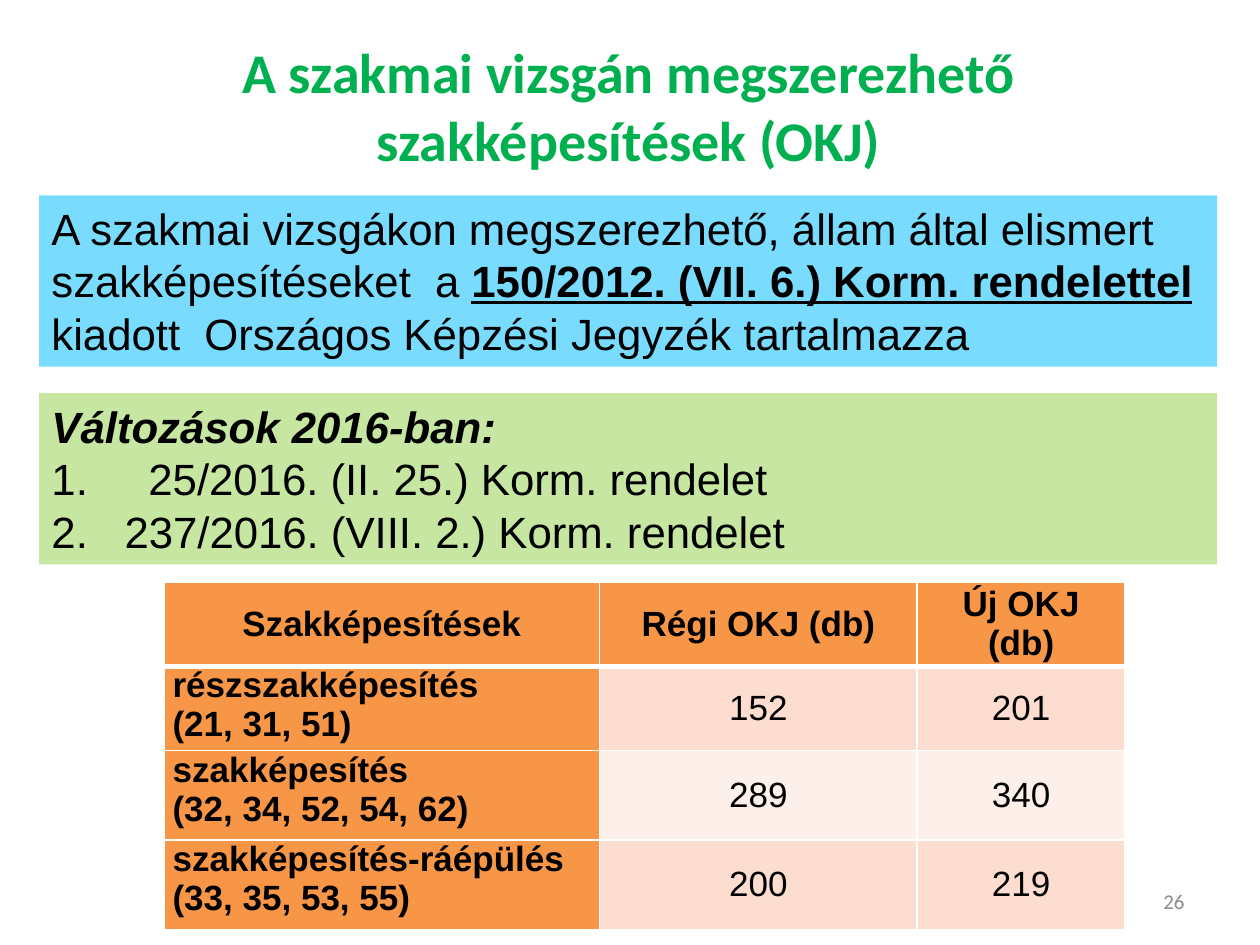
from dataclasses import dataclass

from lxml import etree
from pptx import Presentation
from pptx.dml.color import RGBColor
from pptx.enum.shapes import MSO_SHAPE
from pptx.enum.text import MSO_ANCHOR, PP_ALIGN
from pptx.oxml.ns import qn
from pptx.util import Inches, Pt

RECTANGLE = MSO_SHAPE.RECTANGLE
TOP, MIDDLE = MSO_ANCHOR.TOP, MSO_ANCHOR.MIDDLE
LEFT, CENTER = PP_ALIGN.LEFT, PP_ALIGN.CENTER
RIGHT, JUSTIFY = PP_ALIGN.RIGHT, PP_ALIGN.JUSTIFY
TITLE_ONLY = 5


@dataclass(frozen=True)
class Theme:
    heading_font: str = "Calibri"
    body_font: str = "Arial"
    title_size: int = 32
    body_size: int = 25
    table_size: int = 20
    number_size: int = 12
    black: str = "000000"
    white: str = "FFFFFF"
    green: str = "00B050"
    grey: str = "8C8C8C"
    blue_panel: str = "79DCFF"
    green_panel: str = "C6E6A2"
    orange: str = "F79646"
    bands: tuple = ("FCDDCF", "FDEFE9")


THEME = Theme()
PANEL_LEFT, PANEL_WIDTH, PANEL_HEIGHT = 0.31, 9.35, 1.36
COLUMNS = (3.46, 2.52, 1.65)
ROWS = (0.43, 0.67, 0.71, 0.71)

HEADER = ("Szakképesítések", "Régi OKJ (db)", "Új OKJ (db)")
RECORDS = (
    ("részszakképesítés", "(21, 31, 51)", "152", "201"),
    ("szakképesítés", "(32, 34, 52, 54, 62)", "289", "340"),
    ("szakképesítés-ráépülés", "(33, 35, 53, 55)", "200", "219"),
)


def add_span(para, text, size=THEME.body_size, color=THEME.black,
             font=THEME.body_font, **styles):
    span = para.add_run()
    span.text = text
    span.font.name, span.font.size = font, Pt(size)
    span.font.color.rgb = RGBColor.from_string(color)
    for style, value in styles.items():
        setattr(span.font, style, value)


def next_para(frame, index, align=LEFT):
    para = frame.paragraphs[0] if index == 0 else frame.add_paragraph()
    para.alignment = align
    return para


def number_para(para, number, indent):
    """Give the paragraph an automatic number and a hanging indent."""
    props = para._p.get_or_add_pPr()
    props.set("marL", str(Inches(indent)))
    props.set("indent", str(-Inches(indent)))
    etree.SubElement(props, qn("a:buFont"), typeface=THEME.body_font)
    etree.SubElement(props, qn("a:buAutoNum"), type="arabicPeriod",
                     startAt=str(number))


def add_title(page, text):
    title = page.shapes.title
    title.left, title.top = Inches(0.49), Inches(0.21)
    title.width, title.height = Inches(9), Inches(1.25)
    frame = title.text_frame
    frame.word_wrap, frame.vertical_anchor = True, MIDDLE
    add_span(next_para(frame, 0, CENTER), text, THEME.title_size,
             THEME.green, THEME.heading_font, bold=True)


def add_panel(page, top, color, lines):
    """Add a filled panel; each line is a list of (text, styles) pairs."""
    box = page.shapes.add_shape(
        RECTANGLE, Inches(PANEL_LEFT), Inches(top),
        Inches(PANEL_WIDTH), Inches(PANEL_HEIGHT))
    box.shadow.inherit = False
    box.fill.solid()
    box.fill.fore_color.rgb = RGBColor.from_string(color)
    box.line.fill.background()
    frame = box.text_frame
    frame.word_wrap, frame.vertical_anchor = True, TOP
    for index, line in enumerate(lines):
        para = next_para(frame, index)
        for text, styles in line:
            add_span(para, text, **styles)
    return frame


def set_borders(cell, bottom=1):
    props = cell._tc.get_or_add_tcPr()
    widths = {"a:lnL": 1, "a:lnR": 1, "a:lnT": 1, "a:lnB": bottom}
    for index, (side, width) in enumerate(widths.items()):
        border = etree.Element(qn(side), w=str(Pt(width)))
        fill = etree.SubElement(border, qn("a:solidFill"))
        etree.SubElement(fill, qn("a:srgbClr"), val=THEME.white)
        props.insert(index, border)


def fill_cell(cell, lines, color, align=CENTER, anchor=MIDDLE, bold=False,
              bottom=1):
    cell.fill.solid()
    cell.fill.fore_color.rgb = RGBColor.from_string(color)
    cell.margin_left = cell.margin_right = Inches(0.07)
    cell.margin_top = cell.margin_bottom = 0
    cell.vertical_anchor = anchor
    for index, line in enumerate(lines):
        para = next_para(cell.text_frame, index, align)
        add_span(para, line, THEME.table_size, bold=bold)
    set_borders(cell, bottom)


def add_counts_table(page):
    table = page.shapes.add_table(
        len(ROWS), len(COLUMNS), Inches(1.3), Inches(4.62),
        Inches(sum(COLUMNS)), Inches(sum(ROWS))).table
    for column, width in zip(table.columns, COLUMNS):
        column.width = Inches(width)
    for row, height in zip(table.rows, ROWS):
        row.height = Inches(height)
    for column, label in enumerate(HEADER):
        fill_cell(table.cell(0, column), [label], THEME.orange, bold=True,
                  bottom=3)
    for row, (name, codes, *counts) in enumerate(RECORDS, start=1):
        fill_cell(table.cell(row, 0), [name, codes], THEME.orange,
                  JUSTIFY, TOP, bold=True)
        band = THEME.bands[(row - 1) % 2]
        for column, count in enumerate(counts, start=1):
            fill_cell(table.cell(row, column), [count], band)


def add_page_number(page, text):
    box = page.shapes.add_textbox(Inches(7.17), Inches(6.95),
                                  Inches(2.33), Inches(0.4))
    frame = box.text_frame
    frame.word_wrap, frame.vertical_anchor = True, MIDDLE
    add_span(next_para(frame, 0, RIGHT), text, THEME.number_size,
             THEME.grey, THEME.heading_font)


def main():
    deck = Presentation()
    deck.slide_width, deck.slide_height = Inches(10), Inches(7.5)
    page = deck.slides.add_slide(deck.slide_layouts[TITLE_ONLY])
    add_title(page, "A szakmai vizsgán megszerezhető szakképesítések (OKJ)")

    # Legal basis
    add_panel(page, 1.55, THEME.blue_panel, [
        [("A szakmai vizsgákon megszerezhető, állam által elismert", {})],
        [("szakképesítéseket  a ", {}),
         ("150/2012. (VII. 6.) Korm. rendelettel",
          {"bold": True, "underline": True})],
        [("kiadott  Országos Képzési Jegyzék tartalmazza", {})],
    ])
    add_page_number(page, "26")

    # Amendments as a numbered list
    changes = add_panel(page, 3.12, THEME.green_panel, [
        [("Változások 2016-ban:", {"bold": True, "italic": True})],
        [("25/2016. (II. 25.) Korm. rendelet", {})],
        [("237/2016. (VIII. 2.) Korm. rendelet", {})],
    ])
    for number, indent in enumerate((0.77, 0.58), start=1):
        number_para(changes.paragraphs[number], number, indent)

    # Old and new counts
    add_counts_table(page)
    deck.save("out.pptx")


if __name__ == "__main__":
    main()
